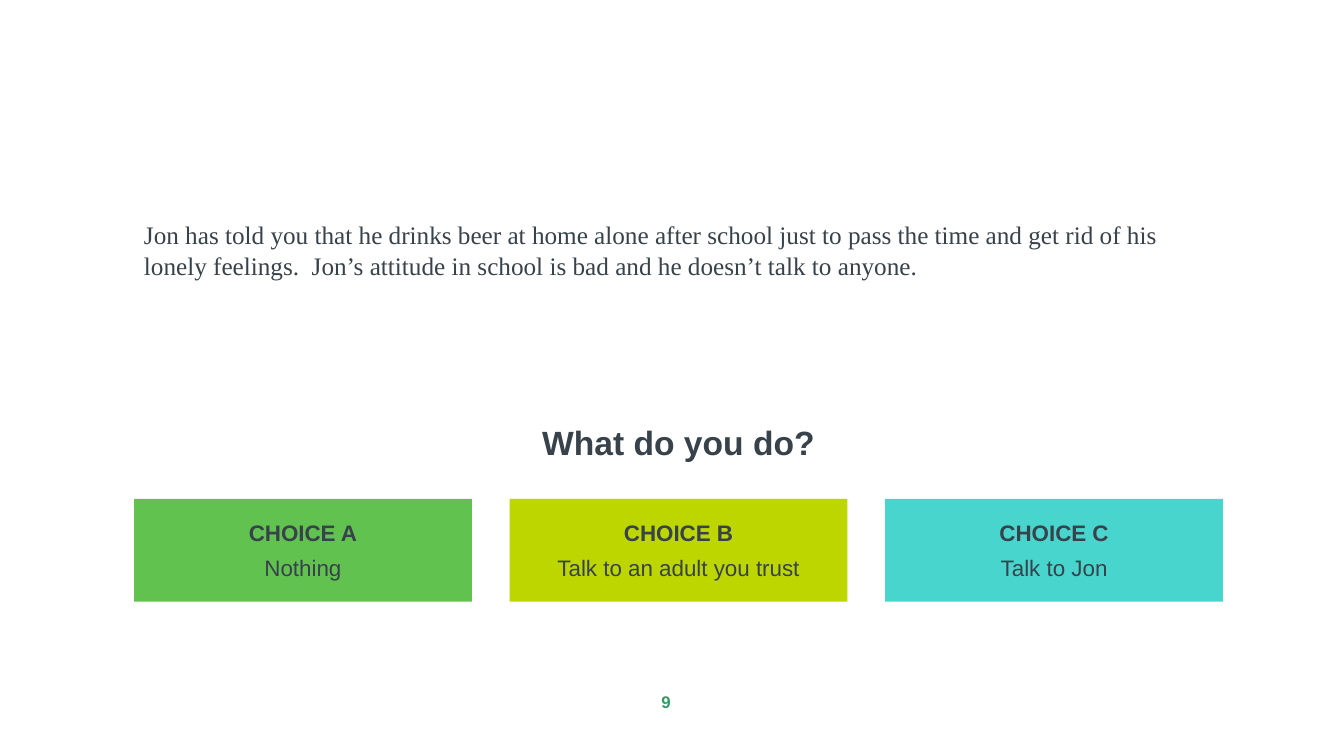
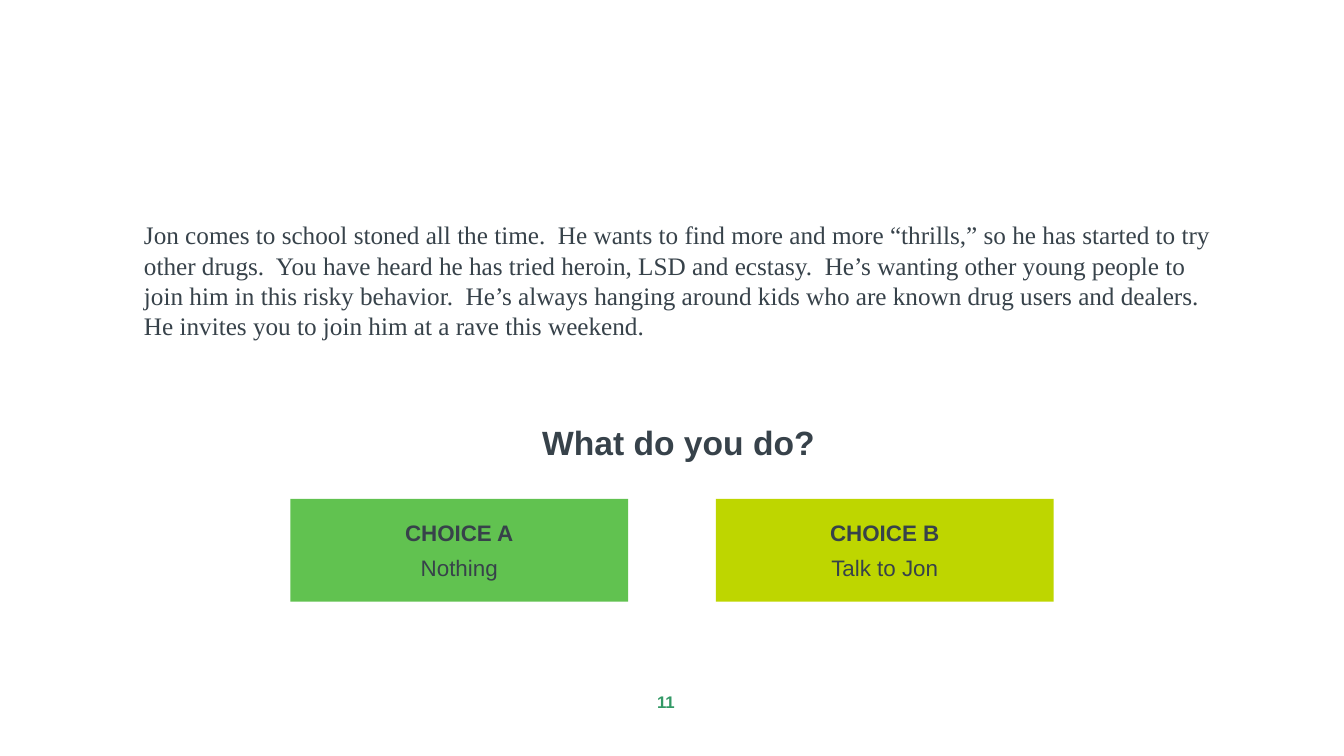
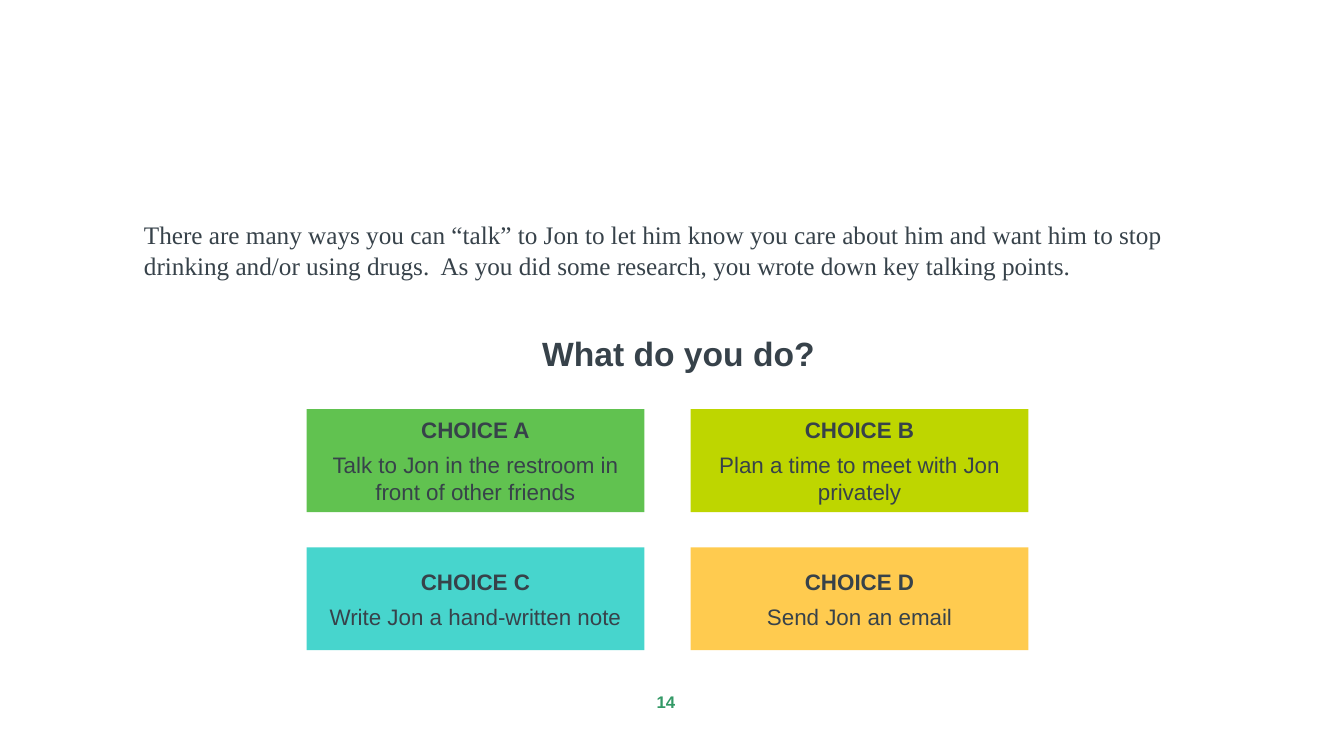
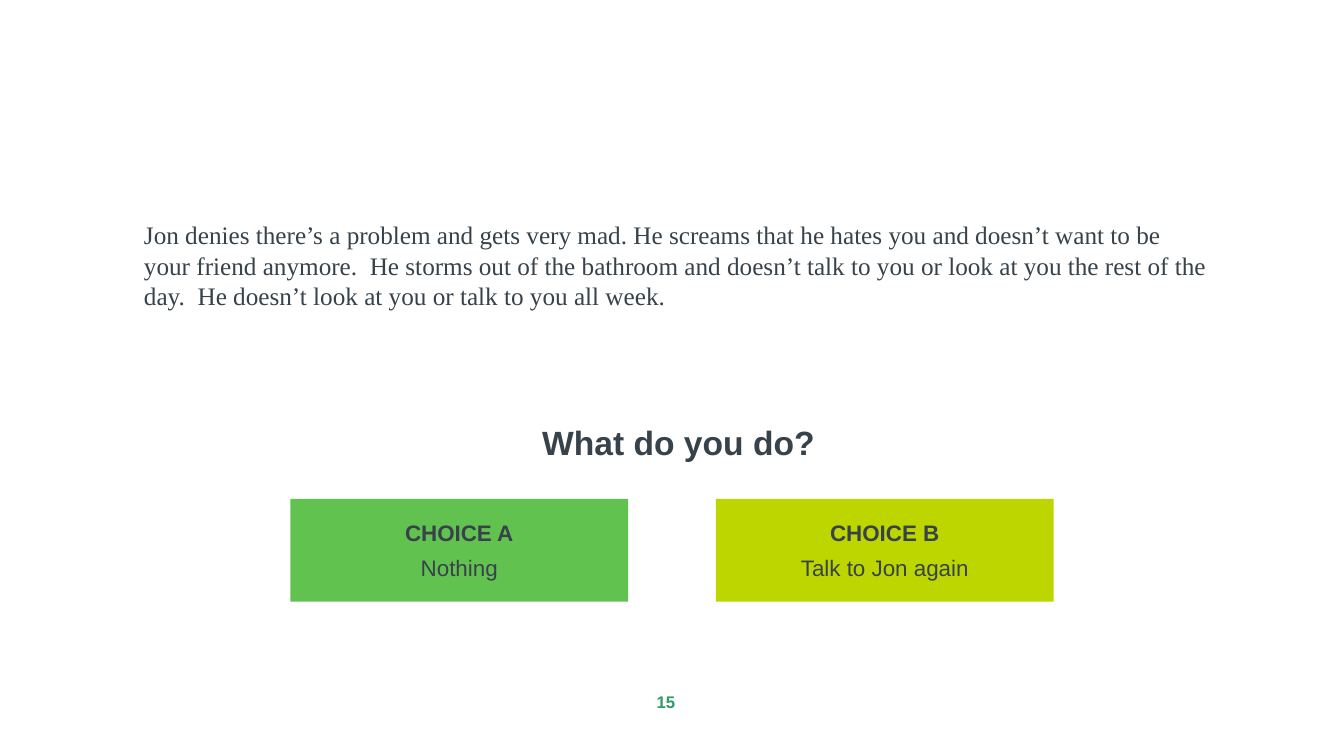
from pptx import Presentation
from pptx.dml.color import RGBColor
from pptx.enum.shapes import MSO_SHAPE
from pptx.enum.text import MSO_ANCHOR, PP_ALIGN
from pptx.util import Inches, Pt

# Content
QUESTION = "What do you do?"
SCENES = [
    {
        "page": 9,
        "story": "Jon has told you that he drinks beer at home alone after school just to "
                 "pass the time and get rid of his lonely feelings.  Jon’s attitude in "
                 "school is bad and he doesn’t talk to anyone.",
        "story_height": 1.04,
        "choices": ["Nothing", "Talk to an adult you trust", "Talk to Jon"],
    },
    {
        "page": 11,
        "story": "Jon comes to school stoned all the time.  He wants to find more and more "
                 "“thrills,” so he has started to try other drugs.  You have heard he has "
                 "tried heroin, LSD and ecstasy.  He’s wanting other young people to join "
                 "him in this risky behavior.  He’s always hanging around kids who are "
                 "known drug users and dealers.  He invites you to join him at a rave this "
                 "weekend.",
        "story_height": 1.31,
        "choices": ["Nothing", "Talk to Jon"],
    },
    {
        "page": 14,
        "story": "There are many ways you can “talk” to Jon to let him know you care about "
                 "him and want him to stop drinking and/or using drugs.  As you did some "
                 "research, you wrote down key talking points.",
        "story_height": 0.71,
        "choices": [
            "Talk to Jon in the restroom in front of other friends",
            "Plan a time to meet with Jon privately",
            "Write Jon a hand-written note",
            "Send Jon an email",
        ],
    },
    {
        "page": 15,
        "story": "Jon denies there’s a problem and gets very mad. He screams that he hates "
                 "you and doesn’t want to be your friend anymore.  He storms out of the "
                 "bathroom and doesn’t talk to you or look at you the rest of the day.  He "
                 "doesn’t look at you or talk to you all week.",
        "story_height": 1.01,
        "choices": ["Nothing", "Talk to Jon again"],
    },
]

# Shared style
COLORS = {"paper": "FFFFFF", "ink": "37424A", "page": "339966"}
CHOICE_COLORS = {"A": "61C250", "B": "BED600", "C": "47D5CD", "D": "FFCB4F"}
SANS, SERIF = "Arial", "Times New Roman"

# Layout in inches
LEFT, WIDTH = 1.33, 10.8
STORY_TOP, QUESTION_HEIGHT = 2.13, 0.81
CHOICE_WIDTH, CHOICE_HEIGHT, ROW_GAP = 3.35, 1.02, 0.35
# Number of choices: columns, left, top and gap between columns
GRIDS = {
    2: (2, 2.88, 4.95, 0.87),
    3: (3, LEFT, 4.95, 0.375),
    4: (2, 3.04, 4.06, 0.46),
}


def color(hex_value):
    return RGBColor.from_string(hex_value)


def write(paragraph, text, size, font=SANS, ink="ink", bold=False, align=PP_ALIGN.CENTER):
    paragraph.alignment = align
    run = paragraph.add_run()
    run.text = text
    run.font.name, run.font.size, run.font.bold = font, Pt(size), bold
    run.font.color.rgb = color(COLORS[ink])


def add_text(slide, box, text, size, **style):
    frame = slide.shapes.add_textbox(*map(Inches, box)).text_frame
    frame.word_wrap = True
    write(frame.paragraphs[0], text, size, **style)
    return frame


def add_page_number(slide, number):
    frame = add_text(slide, (6.39, 6.76, 0.43, 0.41), str(number), 12, ink="page", bold=True)
    frame.margin_left = frame.margin_right = 0
    frame.vertical_anchor = MSO_ANCHOR.MIDDLE


def add_choice(slide, left, top, letter, answer):
    box = (left, top, CHOICE_WIDTH, CHOICE_HEIGHT)
    choice = slide.shapes.add_shape(MSO_SHAPE.RECTANGLE, *map(Inches, box))
    choice.shadow.inherit = False
    choice.fill.solid()
    choice.fill.fore_color.rgb = color(CHOICE_COLORS[letter])
    choice.line.fill.background()
    frame = choice.text_frame
    frame.word_wrap = True
    frame.vertical_anchor = MSO_ANCHOR.MIDDLE
    write(frame.paragraphs[0], f"CHOICE {letter}", 16, bold=True)
    answer_line = frame.add_paragraph()
    answer_line.space_before = Pt(6)
    write(answer_line, answer, 16)


def add_scene(prs, scene):
    slide = prs.slides.add_slide(prs.slide_layouts[6])
    slide.background.fill.solid()
    slide.background.fill.fore_color.rgb = color(COLORS["paper"])
    add_page_number(slide, scene["page"])
    add_text(slide, (LEFT, STORY_TOP, WIDTH, scene["story_height"]), scene["story"], 18,
             font=SERIF, align=PP_ALIGN.LEFT)

    # Question sits right above the grid of choices
    columns, left, top, gap = GRIDS[len(scene["choices"])]
    add_text(slide, (LEFT, top - QUESTION_HEIGHT, WIDTH, QUESTION_HEIGHT), QUESTION, 24,
             bold=True)
    for i, (letter, answer) in enumerate(zip(CHOICE_COLORS, scene["choices"])):
        row, column = divmod(i, columns)
        add_choice(slide, left + column * (CHOICE_WIDTH + gap),
                   top + row * (CHOICE_HEIGHT + ROW_GAP), letter, answer)


def main():
    prs = Presentation()
    prs.slide_width, prs.slide_height = Inches(13.33), Inches(7.5)
    for scene in SCENES:
        add_scene(prs, scene)
    prs.save("out.pptx")


if __name__ == "__main__":
    main()
